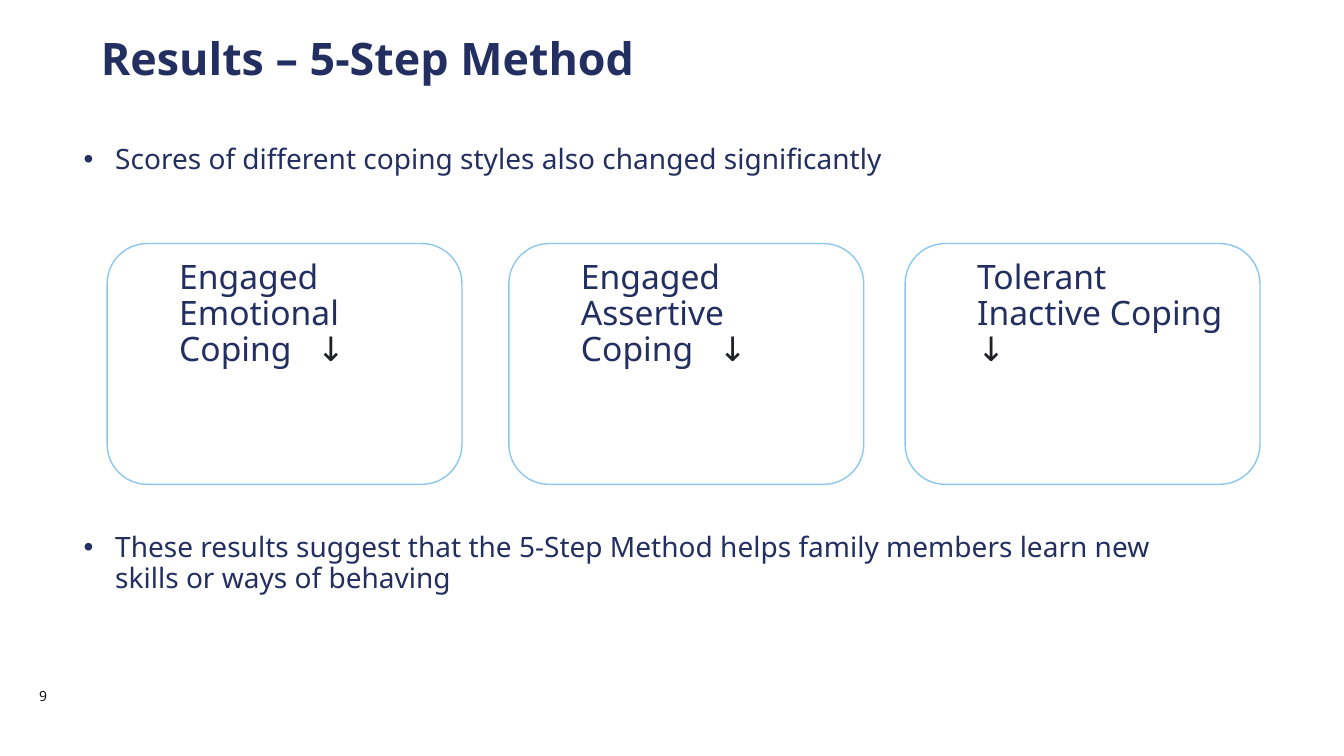
from lxml.etree import SubElement
from pptx import Presentation
from pptx.dml.color import RGBColor
from pptx.enum.shapes import MSO_SHAPE
from pptx.enum.text import MSO_ANCHOR, PP_ALIGN
from pptx.oxml.ns import qn
from pptx.util import Pt

COLORS = {"navy": "232F60", "sky": "8CC7EE", "white": "FFFFFF",
          "ink": "151515", "arrow": "202124"}
FONT = "Noto Sans"
COPING_STYLES = [(76.5, "Engaged Emotional Coping  "),
                 (363.5, "Engaged Assertive Coping  "),
                 (646.5, "Tolerant Inactive Coping ")]


def rgb(name):
    """Return the named colour."""
    return RGBColor.from_string(COLORS[name])


def add_text(p, text, size=20, color="navy", font=FONT, bold=False):
    """Add a formatted run to a left-aligned paragraph."""
    p.alignment = PP_ALIGN.LEFT
    p.line_spacing = 0.9
    r = p.add_run()
    r.text = text
    r.font.size = Pt(size)
    r.font.name = font
    r.font.bold = bold
    r.font.color.rgb = rgb(color)


def set_indent(p, left, first=0, bullet=None):
    """Set the paragraph indents and an optional bullet."""
    ppr = p._p.get_or_add_pPr()
    ppr.set("marL", str(Pt(left)))
    ppr.set("indent", str(Pt(first)))
    if bullet:
        SubElement(ppr, qn("a:buFont"), typeface="Arial")
        SubElement(ppr, qn("a:buChar"), char=bullet)


def format_frame(tf, anchor=MSO_ANCHOR.TOP):
    """Wrap the text and remove the margins of its frame."""
    tf.word_wrap = True
    tf.vertical_anchor = anchor
    tf.margin_left = tf.margin_right = tf.margin_top = tf.margin_bottom = 0


def add_title(s, text):
    """Place and fill the title placeholder."""
    sp = s.shapes.title
    sp.left, sp.top, sp.width, sp.height = Pt(72), Pt(26.6), Pt(818), Pt(34.6)
    format_frame(sp.text_frame, MSO_ANCHOR.MIDDLE)
    add_text(sp.text_frame.paragraphs[0], text, size=32, bold=True)


def add_box(s, left, top, width, height, anchor=MSO_ANCHOR.TOP):
    """Add a text box without margins and return its text frame."""
    tf = s.shapes.add_textbox(Pt(left), Pt(top), Pt(width), Pt(height)).text_frame
    format_frame(tf, anchor)
    return tf


def add_bullets(s, first, second):
    """Add the two findings, with room for the cards between them."""
    tf = add_box(s, 59.8, 103.7, 800, 340)
    for p, text in ((tf.paragraphs[0], first), (tf.add_paragraph(), second)):
        set_indent(p, 22.5, -22.5, "•")
        add_text(p, text)
    p.space_before = Pt(256)


def add_card(s, left, text):
    """Add a rounded card with a coping style and its down arrow."""
    sp = s.shapes.add_shape(MSO_SHAPE.ROUNDED_RECTANGLE, Pt(left), Pt(174),
                            Pt(253.5), Pt(172))
    sp.shadow.inherit = False
    sp.fill.solid()
    sp.fill.fore_color.rgb = rgb("white")
    sp.line.color.rgb = rgb("sky")
    sp.line.width = Pt(1)
    tf = sp.text_frame
    tf.word_wrap = True
    tf.vertical_anchor = MSO_ANCHOR.TOP
    p = tf.paragraphs[0]
    set_indent(p, 36)
    add_text(p, text, size=24)
    add_text(p, " ↓", size=24, color="arrow", font="Karla")


def main():
    """Build and save the slide."""
    prs = Presentation()
    prs.slide_width, prs.slide_height = Pt(960), Pt(540)
    s = prs.slides.add_slide(prs.slide_layouts[5])
    add_title(s, "Results – 5-Step Method")
    tf = add_box(s, 28, 491.8, 32, 12.2, MSO_ANCHOR.MIDDLE)
    add_text(tf.paragraphs[0], "9", size=10, color="ink")
    add_bullets(s, "Scores of different coping styles also changed significantly",
                "These results suggest that the 5-Step Method helps family "
                "members learn new skills or ways of behaving")
    for left, text in COPING_STYLES:
        add_card(s, left, text)
    prs.save("out.pptx")


if __name__ == "__main__":
    main()
